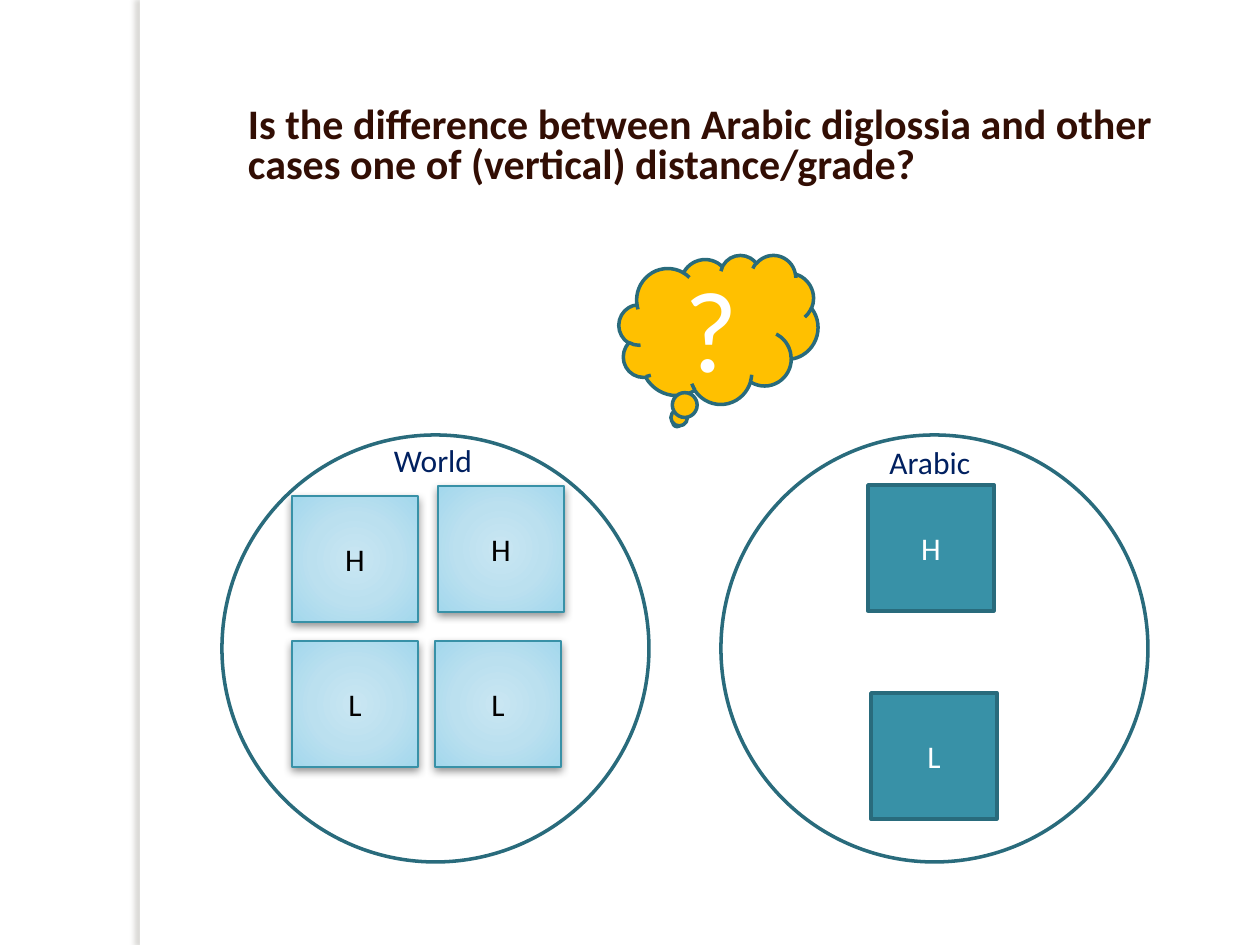
from lxml.etree import SubElement
from pptx import Presentation
from pptx.dml.color import RGBColor
from pptx.enum.shapes import MSO_SHAPE
from pptx.enum.text import MSO_ANCHOR, MSO_AUTO_SIZE, PP_ALIGN
from pptx.oxml.ns import qn
from pptx.util import Emu, Pt

EMU_PER_PX = 914400 / 126
TILE = 126
CIRCLE = 427

WHITE = RGBColor(0xFF, 0xFF, 0xFF)
BLACK = RGBColor(0x00, 0x00, 0x00)
NAVY = RGBColor(0x00, 0x20, 0x60)
BROWN = RGBColor(0x32, 0x0E, 0x04)
TEAL = RGBColor(0x38, 0x91, 0xA7)
DARK_TEAL = RGBColor(0x29, 0x6B, 0x7C)
AMBER = RGBColor(0xFF, 0xC0, 0x00)
PANEL_SHADE = RGBColor(0x73, 0x6F, 0x63)
GLOW = {
    0: RGBColor(0xC9, 0xE6, 0xF2),
    50: RGBColor(0xBB, 0xE0, 0xEF),
    97: RGBColor(0xA4, 0xD8, 0xED),
    100: RGBColor(0x9B, 0xD7, 0xEE),
}


def px(length):
    return Emu(round(length * EMU_PER_PX))


def set_all(target, values):
    for name, value in values.items():
        setattr(target, name, value)


def write(holder, text, size, color, frame_format=None, paragraph_format=None, bold=False):
    frame = holder.text_frame
    set_all(frame, frame_format or {"vertical_anchor": MSO_ANCHOR.MIDDLE, "word_wrap": True})
    paragraph = frame.paragraphs[0]
    set_all(paragraph, paragraph_format or {"alignment": PP_ALIGN.CENTER})
    run = paragraph.add_run()
    run.text = text
    set_all(run.font, {"name": "Calibri", "size": Pt(size), "bold": bold})
    run.font.color.rgb = color


def add_figure(shapes, kind, box, fill=None, line=None, line_width=2):
    figure = shapes.add_shape(kind, *map(px, box))
    figure.shadow.inherit = False
    if fill is None:
        figure.fill.background()
    else:
        figure.fill.solid()
        figure.fill.fore_color.rgb = fill
    if line is None:
        figure.line.fill.background()
    else:
        figure.line.color.rgb = line
        figure.line.width = Pt(line_width)
    return figure


def add_color_stop(parent, color):
    return SubElement(parent, qn("a:srgbClr"), val=str(color))


def cast_shadow(figure, color, opacity, blur, distance, degrees):
    effects = figure._element.spPr.find(qn("a:effectLst"))
    shadow = SubElement(effects, qn("a:outerShdw"), blurRad=str(Pt(blur)),
                        dist=str(Pt(distance)), dir=str(degrees * 60000),
                        algn="ctr", rotWithShape="0")
    SubElement(add_color_stop(shadow, color), qn("a:alpha"), val=str(opacity * 1000))


def fill_with_glow(figure):
    figure.fill.gradient()
    gradient = figure._element.spPr.find(qn("a:gradFill"))
    for child in list(gradient):
        gradient.remove(child)
    stops = SubElement(gradient, qn("a:gsLst"))
    for percent, color in GLOW.items():
        add_color_stop(SubElement(stops, qn("a:gs"), pos=str(percent * 1000)), color)
    circle = SubElement(gradient, qn("a:path"), {"path": "circle"})
    SubElement(circle, qn("a:fillToRect"), l="50000", t="50000", r="50000", b="50000")


def add_light_tile(shapes, letter, left, top):
    tile = add_figure(shapes, MSO_SHAPE.RECTANGLE, (left, top, TILE, TILE), TEAL, TEAL, 0.75)
    fill_with_glow(tile)
    cast_shadow(tile, BLACK, 43, 5, 2, 90)
    write(tile, letter, 18, BLACK)


def add_dark_tile(shapes, letter, left, top):
    tile = add_figure(shapes, MSO_SHAPE.RECTANGLE, (left, top, TILE, TILE), TEAL, DARK_TEAL)
    write(tile, letter, 18, WHITE)


def add_circle(shapes, left):
    add_figure(shapes, MSO_SHAPE.FLOWCHART_CONNECTOR, (left, 435, CIRCLE, CIRCLE), line=DARK_TEAL)


def add_label(shapes, text, box, alignment):
    label = shapes.add_textbox(*map(px, box))
    write(label, text, 18, NAVY,
          {"word_wrap": False, "auto_size": MSO_AUTO_SIZE.SHAPE_TO_FIT_TEXT},
          {"alignment": alignment})


def add_title(shapes, text):
    title = shapes.add_textbox(*map(px, (233, 107, 1004, 87)))
    write(title, text, 24, BROWN,
          {"word_wrap": True, "vertical_anchor": MSO_ANCHOR.BOTTOM, "margin_left": px(15)},
          {"alignment": PP_ALIGN.LEFT, "line_spacing": Pt(23)}, bold=True)


def main():
    deck = Presentation()
    set_all(deck, {"slide_width": px(1260), "slide_height": px(945)})
    shapes = deck.slides.add_slide(deck.slide_layouts[6]).shapes

    # Side edge
    edge = add_figure(shapes, MSO_SHAPE.RECTANGLE, (140, 0, 10, 945), WHITE)
    cast_shadow(edge, PANEL_SHADE, 25, 3, 3, 180)

    # World: high and low varieties close together
    world_tiles = shapes.add_group_shape().shapes
    for letter, left, top in (("H", 292, 496), ("L", 292, 641),
                              ("H", 438, 486), ("L", 435, 641)):
        add_light_tile(world_tiles, letter, left, top)
    add_label(shapes, "World", (379, 435, 108, 50), PP_ALIGN.CENTER)
    add_circle(shapes, 222)

    # Arabic: high and low varieties far apart
    arabic = shapes.add_group_shape().shapes
    for letter, left, top in (("H", 868, 485), ("L", 871, 693)):
        add_dark_tile(arabic, letter, left, top)
    add_circle(arabic, 721)
    add_label(arabic, "Arabic", (877, 437, 110, 50), PP_ALIGN.LEFT)

    # Question
    cloud = add_figure(shapes, MSO_SHAPE.CLOUD_CALLOUT, (619, 255, 199, 149), AMBER, DARK_TEAL)
    write(cloud, "?", 66, WHITE)
    add_title(shapes, "Is the difference between Arabic diglossia and other "
                      "cases one of (vertical) distance/grade?")

    deck.save("out.pptx")


if __name__ == "__main__":
    main()
